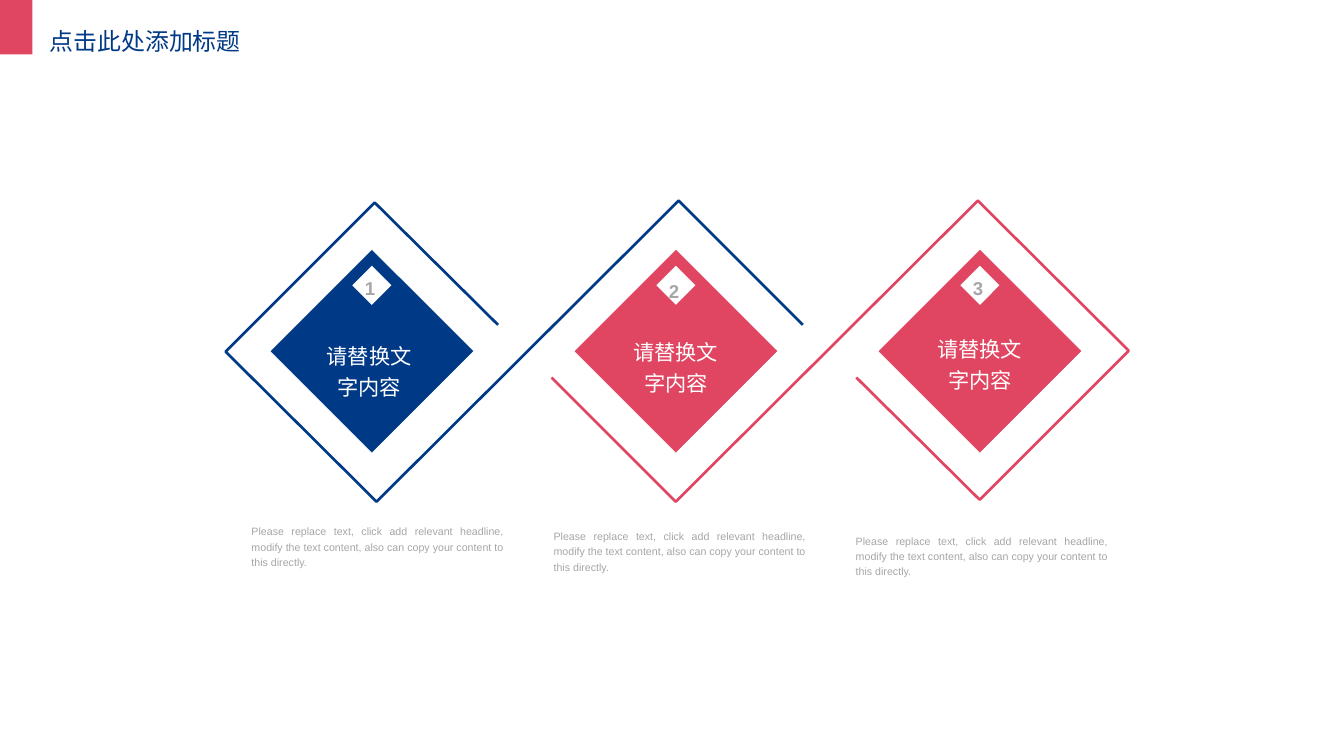
import pptx
import pptx.dml.color
import pptx.enum.shapes
import pptx.enum.text
import pptx.oxml.ns
import pptx.util
from lxml import etree

Rgb = pptx.dml.color.RGBColor.from_string
Align = pptx.enum.text.PP_ALIGN
Anchor = pptx.enum.text.MSO_ANCHOR
RECTANGLE = pptx.enum.shapes.MSO_SHAPE.RECTANGLE

theme = {
    "blue": Rgb("003A87"), "red": Rgb("E04661"),
    "white": Rgb("FFFFFF"), "gray": Rgb("A6A6A6"),
    "latin": "Arial", "cjk": "Noto Sans CJK SC",
    "title": 18, "label": 16, "number": 14, "caption": 8,
}

deck = pptx.Presentation()
deck.slide_width = pptx.util.Inches(14.06)
deck.slide_height = pptx.util.Inches(7.91)
slide = deck.slides.add_slide(deck.slide_layouts[6])
col = deck.slide_width / 100
row = deck.slide_height / 100


def add_text(text, left, top, width, height, size, color, font=theme["latin"],
             bold=False, align=Align.LEFT, anchor=Anchor.TOP, wrap=True,
             inset=0, spacing=1.2, before=0, grow=True):
    box = slide.shapes.add_textbox(round(left * col), round(top * row),
                                   round(width * col), round(height * row))
    frame = box.text_frame
    frame.word_wrap = wrap
    frame.vertical_anchor = anchor
    frame.margin_left = frame.margin_right = pptx.util.Inches(inset)
    frame.margin_top = frame.margin_bottom = pptx.util.Inches(inset / 2)
    if grow:
        frame.auto_size = pptx.enum.text.MSO_AUTO_SIZE.SHAPE_TO_FIT_TEXT
    paragraph = frame.paragraphs[0]
    paragraph.alignment = align
    paragraph.line_spacing = spacing
    paragraph.space_before = pptx.util.Pt(before)
    run = paragraph.add_run()
    run.text = text
    run.font.size = pptx.util.Pt(theme[size])
    run.font.bold = bold
    run.font.color.rgb = theme[color]
    run.font.name = font
    east_asian = etree.SubElement(run.font._element, pptx.oxml.ns.qn("a:ea"))
    east_asian.set("typeface", theme["cjk"])


def add_block(left, top, width, height, color, rotation=0, border=None):
    block = slide.shapes.add_shape(RECTANGLE, round(left), round(top),
                                   round(width), round(height))
    block.shadow.inherit = False
    block.rotation = rotation
    block.fill.solid()
    block.fill.fore_color.rgb = theme[color]
    if border:
        block.line.color.rgb = theme["white"]
        block.line.width = pptx.util.Pt(border)
    else:
        block.line.fill.background()


add_block(0, 0, 2.42 * col, 7.21 * row, "red")

blue_ribbon = [(59.74, 42.98), (50.5, 26.55), (28.02, 66.37),
               (16.79, 46.52), (27.88, 26.8), (37.06, 42.98)]
red_ribbon = [(100.78 - x, 92.92 - y) for x, y in blue_ribbon]
for color, ribbon in (("blue", blue_ribbon), ("red", red_ribbon)):
    corners = [(round(x * col), round(y * row)) for x, y in ribbon]
    builder = slide.shapes.build_freeform(*corners[0])
    builder.add_line_segments(corners[1:], close=False)
    outline = builder.convert_to_shape()
    outline.shadow.inherit = False
    outline.fill.background()
    outline.line.color.rgb = theme[color]
    outline.line.width = pptx.util.Pt(2)

caption = ("Please replace text, click add relevant headline, modify the text "
           "content, also can copy your content to this directly.")
diamond_side = 10.74 * col
badge_side = 2.06 * col
steps = [
    ("1", "blue", 36.16, Anchor.MIDDLE, -0.2, 44.75),
    ("2", "red", 36.41, Anchor.TOP, 0, 44.25),
    ("3", "red", 36.16, Anchor.MIDDLE, 0, 43.87),
]
for index, (number, color, number_top, number_anchor,
            label_shift, label_top) in enumerate(steps):
    center = 27.67 + 22.62 * index
    for side, middle, fill, border in ((diamond_side, 46.46, color, 0.5),
                                       (badge_side, 37.74, "white", None)):
        add_block(center * col - side / 2, middle * row - side / 2,
                  side, side, fill, rotation=315, border=border)
    add_text(number, center - 0.53, number_top, 0.78, 3.29, "number", "gray",
             bold=True, align=Align.CENTER, anchor=number_anchor, wrap=False)
    add_text("请替换文字内容", center - 3.5 + label_shift, label_top, 7, 7.84,
             "label", "white", align=Align.CENTER)
    add_text(caption, 18.71 + 22.48 * index, 69.15 + 0.63 * index, 18.78, 5.94,
             "caption", "gray", align=Align.JUSTIFY)

add_text("点击此处添加标题", 2.99, 2.91, 16.79, 4.93, "title", "blue",
         font=theme["cjk"], inset=0.1, spacing=1.0, before=10.6, grow=False)

deck.save("out.pptx")
